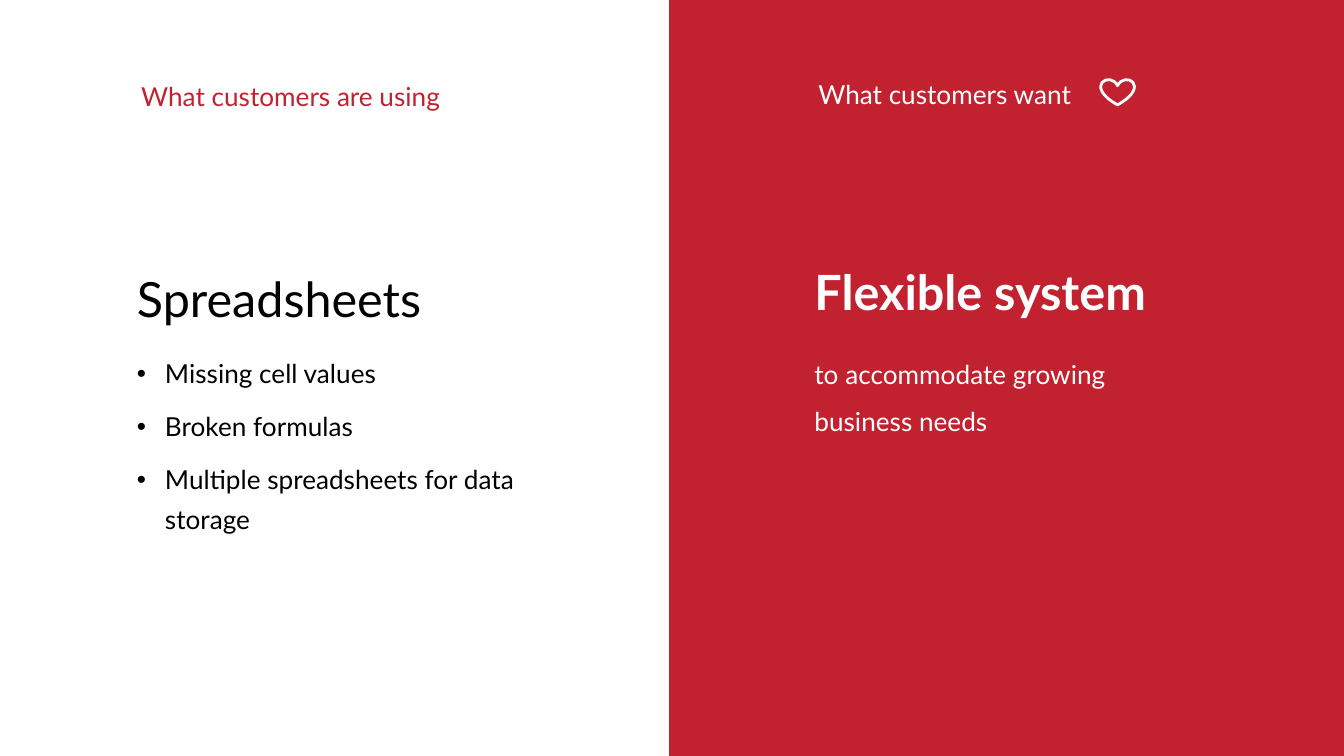
from dataclasses import dataclass

from lxml.etree import SubElement
from pptx import Presentation
from pptx.dml.color import RGBColor
from pptx.enum.shapes import MSO_SHAPE
from pptx.enum.text import MSO_ANCHOR, MSO_AUTO_SIZE, PP_ALIGN
from pptx.oxml.ns import qn
from pptx.util import Pt


@dataclass(frozen=True)
class Theme:
    """Colours, font and type sizes."""
    red: RGBColor = RGBColor(0xC2, 0x21, 0x2F)
    white: RGBColor = RGBColor(0xFF, 0xFF, 0xFF)
    black: RGBColor = RGBColor(0, 0, 0)
    face: str = "Lato"
    head: float = 26
    text: float = 14


THEME = Theme()
WIDTH, HEIGHT = 720, 405
SPLIT = 358.5


def place(shape, box, left, top, width, height):
    """Set a shape at an offset within a box."""
    shape.left, shape.top = Pt(box[0] + left), Pt(box[1] + top)
    shape.width, shape.height = Pt(width), Pt(height)


def write(shape, lines, size, color, bold=False, gap=1.0, before=0, bullet=False):
    """Fill a shape with lines of text in one style."""
    frame = shape.text_frame
    frame.text = "\n".join(lines)
    frame.word_wrap = True
    frame.auto_size = MSO_AUTO_SIZE.NONE
    frame.vertical_anchor = MSO_ANCHOR.TOP
    frame.margin_left = frame.margin_right = Pt(7.2)
    frame.margin_top = frame.margin_bottom = Pt(3.6)
    for para in frame.paragraphs:
        para.alignment = PP_ALIGN.LEFT
        para.line_spacing = gap
        para.space_before = Pt(before)
        para.space_after = Pt(0)
        mark(para, bullet)
        font = para.font
        font.name, font.size, font.bold = THEME.face, Pt(size), bold
        font.color.rgb = color


def mark(para, bullet):
    """Give a paragraph a hanging bullet, or none."""
    props = para._p.get_or_add_pPr()
    indent = Pt(15) if bullet else 0
    props.set("marL", str(indent))
    props.set("indent", str(-indent))
    if bullet:
        SubElement(props, qn("a:buFont")).set("typeface", "Arial")
        SubElement(props, qn("a:buChar")).set("char", "•")
    else:
        SubElement(props, qn("a:buNone"))


def draw_now(box, label, title, body):
    """Place the column of what customers use today."""
    place(label, box, 68.4, 39.6, 229.7, 25.2)
    write(label, ["What customers are using"], THEME.text, THEME.red)
    place(title, box, 66.2, 140.4, 229.7, 72.7)
    write(title, ["Spreadsheets"], THEME.head, THEME.black)
    place(body, box, 66.2, 183.6, 229.7, 113)
    faults = ["Missing cell values", "Broken formulas",
              "Multiple spreadsheets for data storage"]
    write(body, faults, THEME.text, THEME.black, gap=1.25, before=7.5, bullet=True)


def draw_want(slide, box, title, body):
    """Place the red column of what customers want."""
    panel = slide.shapes.add_shape(MSO_SHAPE.RECTANGLE, *map(Pt, box))
    panel.shadow.inherit = False
    panel.fill.solid()
    panel.fill.fore_color.rgb = THEME.red
    panel.line.fill.background()
    panel.element.getparent().insert(2, panel.element)

    place(title, box, 70.6, 136.8, 216, 71.3)
    write(title, ["Flexible system"], THEME.head, THEME.white, bold=True)
    place(body, box, 70.6, 180, 198, 113)
    write(body, ["to accommodate growing business needs"],
          THEME.text, THEME.white, gap=1.5)

    heart = slide.shapes.add_shape(MSO_SHAPE.HEART, 0, 0, 0, 0)
    place(heart, box, 231.2, 42.5, 18, 13.7)
    heart.shadow.inherit = False
    heart.fill.background()
    heart.line.color.rgb = THEME.white
    heart.line.width = Pt(1.5)

    label = slide.shapes.add_textbox(0, 0, 0, 0)
    place(label, box, 72.8, 38.2, 216, 28.8)
    write(label, ["What customers want"], THEME.text, THEME.white)


def main():
    """Build the comparison slide."""
    deck = Presentation()
    deck.slide_width, deck.slide_height = Pt(WIDTH), Pt(HEIGHT)
    slide = deck.slides.add_slide(deck.slide_layouts.get_by_name("Comparison"))
    title, label, faults, wish, needs = slide.placeholders
    draw_now((0, 0, SPLIT, HEIGHT), label, title, faults)
    draw_want(slide, (SPLIT, 0, WIDTH - SPLIT, HEIGHT), wish, needs)
    deck.save("out.pptx")


if __name__ == "__main__":
    main()
